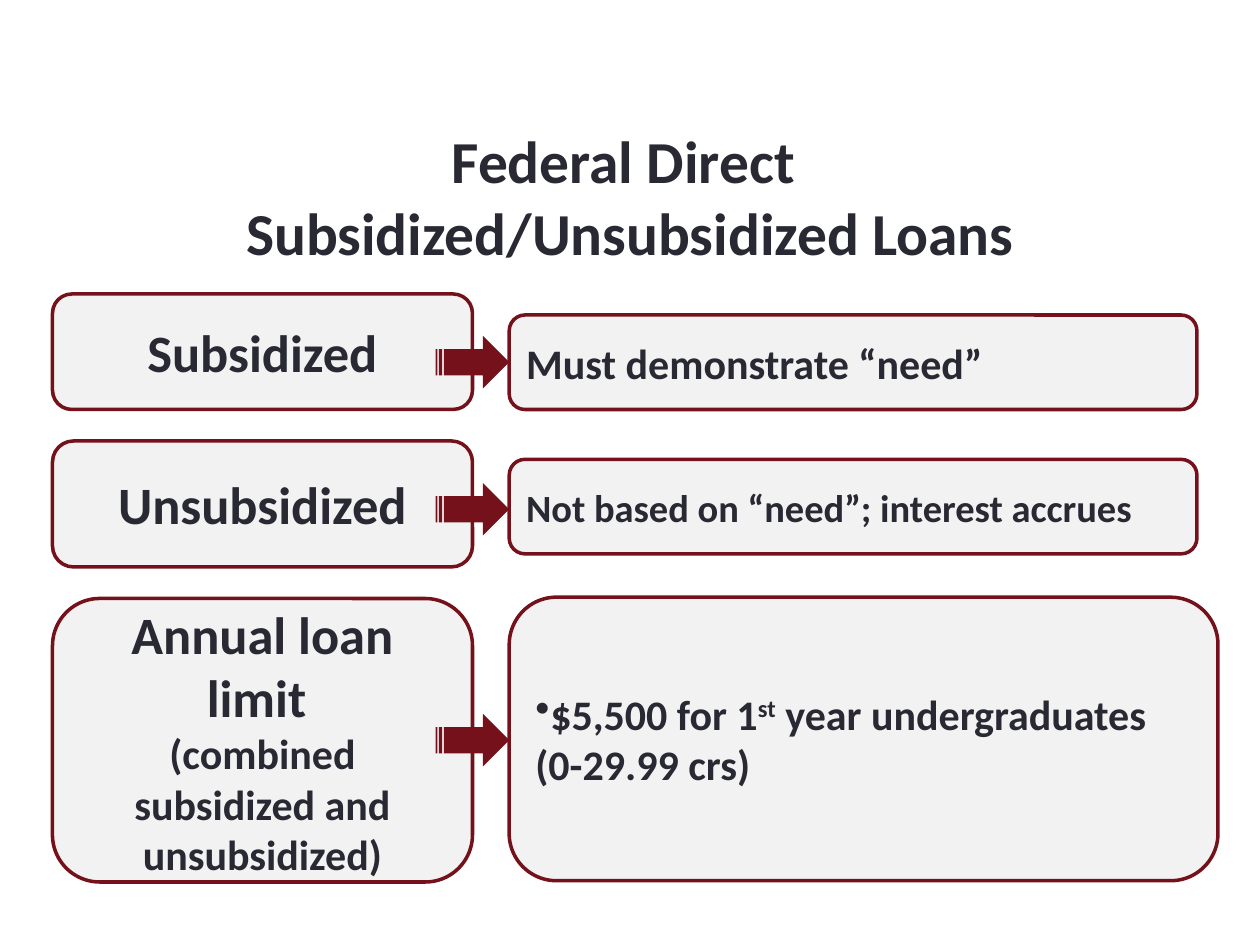
from pptx import Presentation
from pptx.dml.color import RGBColor
from pptx.enum.shapes import MSO_SHAPE
from pptx.enum.text import MSO_ANCHOR, PP_ALIGN
from pptx.oxml.ns import qn
from pptx.util import Pt
from lxml import etree

PX = 9525  # EMU per px, 96 px to the inch
THEME = {
    "font": "Calibri",
    "ink": RGBColor.from_string("292934"),
    "accent": RGBColor.from_string("75111B"),
    "panel": RGBColor.from_string("F2F2F2"),
    "title": 34, "term": 30, "body": 24, "small": 22,
}


def write(sp, paragraphs, align):
    """Fill a shape with (size, bullet, runs); a run is (text, superscript)."""
    tf = sp.text_frame
    for name, value in {"word_wrap": True, "vertical_anchor": MSO_ANCHOR.MIDDLE}.items():
        setattr(tf, name, value)
    for i, (size, bullet, runs) in enumerate(paragraphs):
        p = tf.add_paragraph() if i else tf.paragraphs[0]
        p.alignment = align
        if bullet:
            etree.SubElement(p._p.get_or_add_pPr(), qn("a:buChar")).set("char", bullet)
        fmt = {"name": THEME["font"], "size": Pt(THEME[size]), "bold": True}
        for text, superscript in runs:
            for j, line in enumerate(text.split("\n")):
                if j:
                    p.add_line_break()
                r = p.add_run()
                r.text = line
                for name, value in fmt.items():
                    setattr(r.font, name, value)
                r.font.color.rgb = THEME["ink"]
                if superscript:
                    r._r.get_or_add_rPr().set("baseline", "30000")


def add_block(kind, x, y, w, h, fill, line=None):
    sp = s.shapes.add_shape(kind, x * PX, y * PX, w * PX, h * PX)
    sp.shadow.inherit = False
    sp.fill.solid()
    sp.fill.fore_color.rgb = fill
    if line is None:
        sp.line.fill.background()
    else:
        sp.line.color.rgb = line
        sp.line.width = Pt(2)
    return sp


prs = Presentation()
prs.slide_width, prs.slide_height = 960 * PX, 720 * PX
s = prs.slides.add_slide(prs.slide_layouts[6])

title = s.shapes.add_textbox(0, 89 * PX, 960 * PX, 120 * PX)
write(title, [("title", None, [("Federal Direct \nSubsidized/Unsubsidized Loans", False)])],
      PP_ALIGN.CENTER)

# Each column: left edge, alignment, then (top, width, height, paragraphs) per row
terms = (40, PP_ALIGN.CENTER, [
    (224, 320, 88, [("term", None, [("Subsidized", False)])]),
    (336, 320, 96, [("term", None, [("Unsubsidized", False)])]),
    (456, 320, 216, [
        ("term", None, [("Annual loan limit ", False)]),
        ("body", None, [("(combined subsidized and unsubsidized)", False)]),
    ]),
])
details = (388, PP_ALIGN.LEFT, [
    (240, 524, 72, [("body", None, [("Must demonstrate “need”", False)])]),
    (350, 524, 72, [("small", None, [("Not based on “need”; interest accrues", False)])]),
    (455, 540, 216, [("body", "•", [
        ("$5,500 for 1", False), ("st", True),
        (" year undergraduates (0-29.99 crs)", False)])]),
])

for x, align, rows in (terms, details):
    for y, w, h, paragraphs in rows:
        box = add_block(MSO_SHAPE.ROUNDED_RECTANGLE, x, y, w, h,
                        THEME["panel"], THEME["accent"])
        write(box, paragraphs, align)
    if x == terms[0]:  # arrows lie over the terms and under the details
        for y in (256, 368, 544):
            add_block(MSO_SHAPE.STRIPED_RIGHT_ARROW, 332, y, 56, 40, THEME["accent"])

prs.save("out.pptx")
